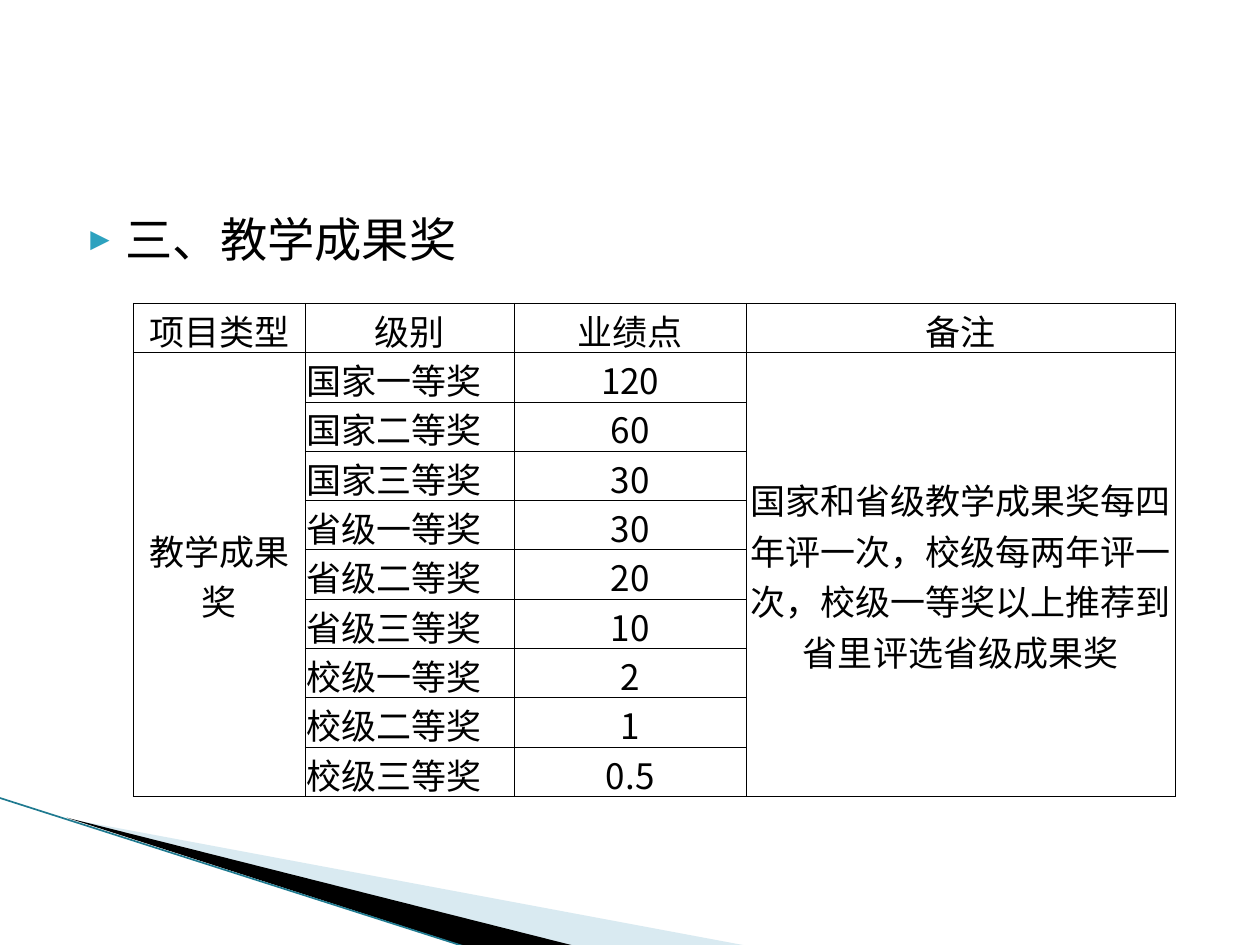
from dataclasses import dataclass

from lxml.etree import SubElement
from pptx import Presentation
from pptx.dml.color import RGBColor
from pptx.enum.shapes import MSO_CONNECTOR
from pptx.enum.text import MSO_ANCHOR, PP_ALIGN
from pptx.oxml.ns import qn
from pptx.util import Pt


@dataclass(frozen=True)
class Theme:
    ink: str = "000000"
    bullet: str = "2DA2BF"
    wedge: str = "A0CBDC"
    edge: str = "1F7A90"
    heading_size: float = 27
    table_size: float = 20
    heading_font: str = "DejaVu Sans Mono"
    table_font: str = "Noto Sans CJK SC"


def add_element(parent, tag, **attributes):
    element = SubElement(parent, qn(tag))
    for name, value in attributes.items():
        element.set(name, str(value))
    return element


def apply_format(target, values):
    for name, value in values.items():
        setattr(target, name, value)


class SlideBuilder:
    def __init__(self, page, theme):
        self.page = page
        self.theme = theme

    def wedge(self, points, color, opacity=100):
        corners = [(Pt(x), Pt(y)) for x, y in points]
        outline = self.page.shapes.build_freeform(*corners[0])
        outline.add_line_segments(corners[1:], close=True)
        shape = outline.convert_to_shape()
        shape.shadow.inherit = False
        shape.fill.solid()
        shape.fill.fore_color.rgb = RGBColor.from_string(color)
        shape.line.fill.background()
        if opacity < 100:
            solid = shape.fill._xPr.find(qn("a:solidFill"))
            add_element(solid[0], "a:alpha", val=opacity * 1000)

    def line(self, start, end, color, width):
        ends = [Pt(value) for value in (*start, *end)]
        connector = self.page.shapes.add_connector(MSO_CONNECTOR.STRAIGHT, *ends)
        connector.line.color.rgb = RGBColor.from_string(color)
        connector.line.width = Pt(width)
        add_element(connector._element.spPr, "a:effectLst")

    def text(self, para, words, size, font):
        span = para.add_run()
        span.text = words
        apply_format(span.font, {"size": Pt(size), "name": font})
        span.font.color.rgb = RGBColor.from_string(self.theme.ink)
        add_element(span.font._element, "a:ea", typeface=self.theme.table_font)

    def bullet_heading(self, words, left, top, width, height):
        area = [Pt(value) for value in (left, top, width, height)]
        box = self.page.shapes.add_textbox(*area)
        box.text_frame.word_wrap = True
        para = box.text_frame.paragraphs[0]
        properties = para._p.get_or_add_pPr()
        properties.set("marL", str(Pt(28.8)))
        properties.set("indent", str(Pt(-20.2)))
        color = add_element(properties, "a:buClr")
        add_element(color, "a:srgbClr", val=self.theme.bullet)
        add_element(properties, "a:buSzPct", val=68000)
        add_element(properties, "a:buFont", typeface=self.theme.heading_font)
        add_element(properties, "a:buChar", char="▶")
        self.text(para, words, self.theme.heading_size, self.theme.heading_font)

    def cell(self, cell, words, align):
        apply_format(cell, {
            "vertical_anchor": MSO_ANCHOR.MIDDLE,
            "margin_left": Pt(0.75),
            "margin_right": Pt(0.75),
            "margin_top": Pt(0.75),
            "margin_bottom": Pt(0),
        })
        properties = cell._tc.get_or_add_tcPr()
        for side in ("a:lnL", "a:lnR", "a:lnT", "a:lnB"):
            border = add_element(properties, side, w=Pt(0.5))
            solid = add_element(border, "a:solidFill")
            add_element(solid, "a:srgbClr", val=self.theme.ink)
        cell.fill.background()
        para = cell.text_frame.paragraphs[0]
        para.alignment = align
        if words:
            self.text(para, words, self.theme.table_size, self.theme.table_font)

    def table(self, rows, widths, left, top, row_height, left_column):
        area = [Pt(v) for v in (left, top, sum(widths), row_height * len(rows))]
        table = self.page.shapes.add_table(len(rows), len(widths), *area).table
        apply_format(table, {"first_row": False, "horz_banding": False})
        for column, width in zip(table.columns, widths):
            column.width = Pt(width)
        for row_index, row in enumerate(rows):
            table.rows[row_index].height = Pt(row_height)
            for index, words in enumerate(row):
                is_left = index == left_column and row_index > 0
                align = PP_ALIGN.LEFT if is_left else PP_ALIGN.CENTER
                self.cell(table.cell(row_index, index), words, align)
        # The outer columns each hold one tall cell below the header
        for index in (0, len(widths) - 1):
            table.cell(1, index).merge(table.cell(len(rows) - 1, index))


def main():
    theme = Theme()
    deck = Presentation()
    apply_format(deck, {"slide_width": Pt(720), "slide_height": Pt(540)})
    page = deck.slides.add_slide(deck.slide_layouts[6])
    builder = SlideBuilder(page, theme)

    # Corner decoration
    builder.wedge([(39.6, 468), (428.4, 540.7), (328.3, 540.7)], theme.wedge, 40)
    builder.wedge([(38.2, 467.3), (329, 540.7), (267.8, 541.4)], theme.ink)
    builder.line((-0.7, 455.8), (267.1, 541.4), theme.edge, 0.95)

    # Heading
    builder.bullet_heading("三、教学成果奖", 36, 116.6, 648, 356.4)

    # Award table
    levels = ("国家", "省级", "校级")
    ranks = ("一等奖", "二等奖", "三等奖")
    awards = [level + rank for level in levels for rank in ranks]
    scores = ("120", "60", "30", "30", "20", "10", "2", "1", "0.5")
    rows = [["项目类型", "级别", "业绩点", "备注"]]
    rows += [["", award, score, ""] for award, score in zip(awards, scores)]
    rows[1][0] = "教学成果奖"
    rows[1][3] = (
        "国家和省级教学成果奖每四年评一次，校级每两年评一次，"
        "校级一等奖以上推荐到省里评选省级成果奖"
    )
    builder.table(rows, (98.2, 119.5, 132.5, 245.3), 76.2, 173.3, 28.2, left_column=1)

    deck.save("out.pptx")


if __name__ == "__main__":
    main()
